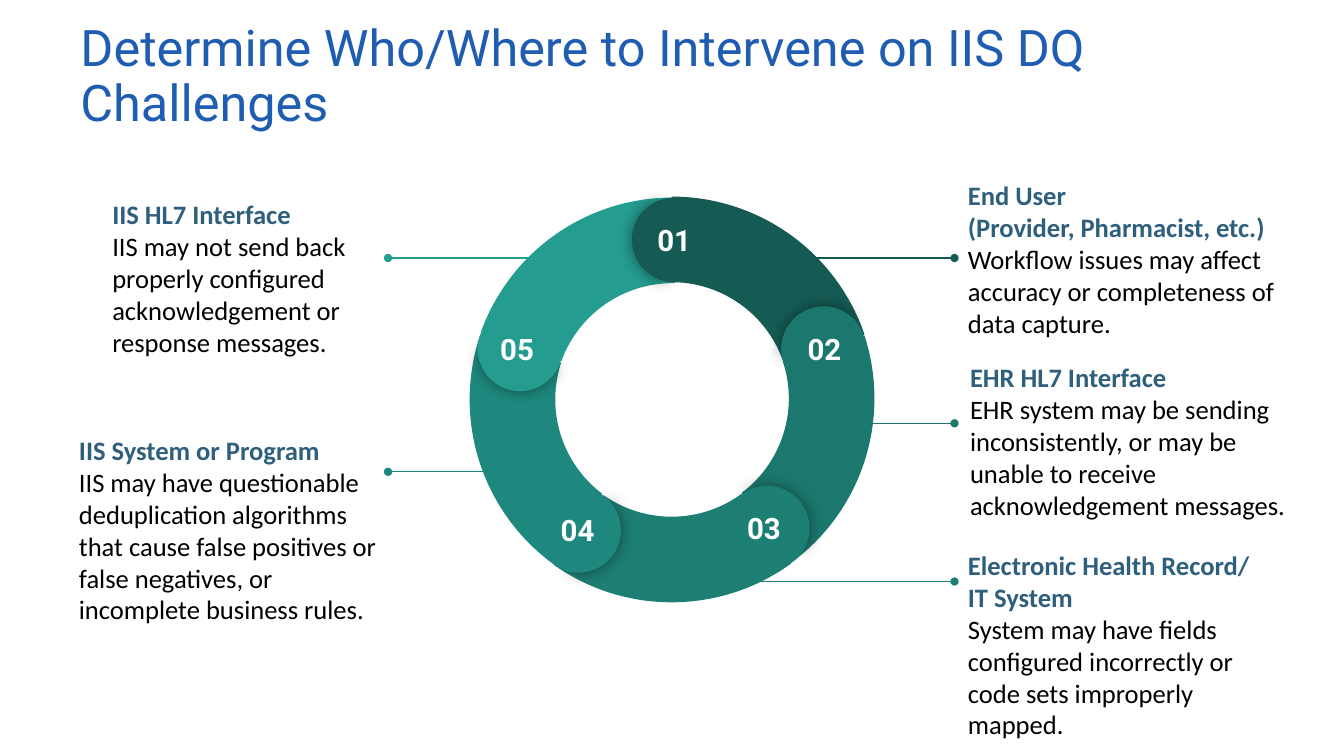
"""Build the slide on where to intervene on IIS data quality challenges."""
from lxml import etree
from pptx import Presentation
from pptx.dml.color import RGBColor
from pptx.enum.shapes import MSO_CONNECTOR, MSO_SHAPE
from pptx.enum.text import MSO_ANCHOR, PP_ALIGN
from pptx.oxml.ns import qn
from pptx.util import Pt

BLOCK_ARC, PIE = MSO_SHAPE.BLOCK_ARC, MSO_SHAPE.PIE
STRAIGHT = MSO_CONNECTOR.STRAIGHT
TOP, MIDDLE = MSO_ANCHOR.TOP, MSO_ANCHOR.MIDDLE
LEFT, CENTER = PP_ALIGN.LEFT, PP_ALIGN.CENTER

TITLE = "Determine Who/Where to Intervene on IIS DQ Challenges"
TITLE_COLOR, HEADING_COLOR, BODY_COLOR = "1E5DB2", "2E5F7D", "000000"

# heading, body, (left, top, width, height)
CALLOUTS = [
    ("End User\v(Provider, Pharmacist, etc.)",
     "Workflow issues may affect accuracy or completeness of data capture.",
     (681.8, 136.1, 265, 97.2)),
    ("EHR HL7 Interface",
     "EHR system may be sending inconsistently, or may be unable to receive acknowledgement messages.",
     (683.3, 266.4, 244.8, 97.2)),
    ("Electronic Health Record/\vIT System",
     "System may have fields configured incorrectly or code sets improperly mapped.",
     (681.8, 411.8, 244.8, 97.2)),
    ("IIS System or Program",
     "IIS may have questionable deduplication algorithms that cause false positives or "
     "false negatives, or incomplete business rules.",
     (46.8, 318.2, 233.3, 120.2)),
    ("IIS HL7 Interface",
     "IIS may not send back properly configured acknowledgement or response messages.",
     (70.6, 149.8, 223.2, 97.2)),
]

# number, color, arc (left, top, turn), cap (left, top, turn), number left, leader (start, end, height)
SEGMENTS = [
    ("04", "1F887E", (335.5, 139.7, 277), (383, 348.5, 211.1), 385.9, (384.5, 277.2, 337)),
    ("02", "1B786E", (333.4, 139, 132), (558, 218.9, 67.1), 562.3, (589, 681.8, 302.4)),
    ("01", "155B54", (334.1, 140.4, 60), (451.4, 141.1, 357.1), 455, (547.2, 681.8, 184.3)),
    ("03", "1D7E74", (334.1, 139, 204), (517.7, 347, 139.1), 519.1, (488.9, 681.8, 415.4)),
    ("05", "249C90", (334.8, 141.1, 350), (341.3, 218.9, 284.1), 342.7, (406.1, 277.2, 184.3)),
]
RING_SIZE, CAP_SIZE = 291.2, 60.5
ARC_ADJUSTMENTS = (126.03, 168.68, 0.21)
CAP_BACK, CAP_FRONT = (61.9, 149.96), (40.28, 171.84)
CAP_FRONT_TURN = 179.3
NUMBER_SIZE, NUMBER_DROP = (53.3, 28.1), 7.9


def rgb(color):
    return RGBColor.from_string(color)


def add_text(slide, box, paragraphs, font_name, size, insets, anchor, align=LEFT):
    """Add a text box; each paragraph is (text, color, bold)."""
    frame = slide.shapes.add_textbox(*map(Pt, box)).text_frame
    frame.word_wrap = True
    frame.vertical_anchor = anchor
    frame.margin_left = frame.margin_right = Pt(insets[0])
    frame.margin_top = frame.margin_bottom = Pt(insets[1])
    for index, (text, color, bold) in enumerate(paragraphs):
        paragraph = frame.add_paragraph() if index else frame.paragraphs[0]
        paragraph.text = text
        paragraph.alignment = align
        paragraph.font.name = font_name
        paragraph.font.size = Pt(size)
        paragraph.font.bold = bold
        paragraph.font.color.rgb = rgb(color)
    return frame


def add_leader(slide, color, start, end, height):
    """Add a thin line ending in a dot."""
    leader = slide.shapes.add_connector(STRAIGHT, Pt(start), Pt(height), Pt(end), Pt(height))
    leader.line.width = Pt(0.75)
    leader.line.color.rgb = rgb(color)
    etree.SubElement(leader.line._get_or_add_ln(), qn("a:tailEnd"), type="oval")
    etree.SubElement(leader._element.spPr, qn("a:effectLst"))


def add_piece(slide, kind, left, top, size, turn, color, adjustments):
    """Add one turned, filled part of the ring."""
    shape = slide.shapes.add_shape(kind, Pt(left), Pt(top), Pt(size), Pt(size))
    shape.rotation = turn % 360
    for index, value in enumerate(adjustments):
        shape.adjustments[index] = value
    shape.fill.solid()
    shape.fill.fore_color.rgb = rgb(color)
    shape.line.fill.background()
    shape.shadow.inherit = False
    return shape


def add_glow(shape):
    """Give a shape a soft shadow on all sides."""
    effects = shape._element.spPr.find(qn("a:effectLst"))
    shadow = etree.SubElement(effects, qn("a:outerShdw"), blurRad=str(Pt(11.2)), dist="0",
                              dir="0", algn="ctr", rotWithShape="0")
    color = etree.SubElement(shadow, qn("a:srgbClr"), val="000000")
    etree.SubElement(color, qn("a:alpha"), val="43000")


def main():
    presentation = Presentation()
    presentation.slide_width, presentation.slide_height = Pt(960), Pt(540)
    slide = presentation.slides.add_slide(presentation.slide_layouts[6])

    title = add_text(slide, (50.4, 16.6, 908.6, 77.8), [(TITLE, TITLE_COLOR, False)],
                     "Roboto", 36, (7.2, 3.6), MIDDLE)
    title.paragraphs[0].line_spacing = 0.9

    for heading, body, box in CALLOUTS:
        frame = add_text(slide, box, [(heading, HEADING_COLOR, True), (body, BODY_COLOR, False)],
                         "Calibri", 19, (9.6, 9.6), MIDDLE)
        frame.paragraphs[1].space_after = Pt(21)

    for _, color, _, _, _, leader in SEGMENTS:
        add_leader(slide, color, *leader)
    for _, color, (left, top, turn), _, _, _ in SEGMENTS:
        add_piece(slide, BLOCK_ARC, left, top, RING_SIZE, turn, color, ARC_ADJUSTMENTS)
    for number, color, _, (left, top, turn), number_left, _ in SEGMENTS:
        add_glow(add_piece(slide, PIE, left, top, CAP_SIZE, turn, color, CAP_BACK))
        add_piece(slide, PIE, left, top, CAP_SIZE, turn + CAP_FRONT_TURN, color, CAP_FRONT)
        add_text(slide, (number_left, top + NUMBER_DROP, *NUMBER_SIZE),
                 [(number, "FFFFFF", True)], "Roboto", 21, (9.6, 9.6), TOP, CENTER)

    presentation.save("out.pptx")


if __name__ == "__main__":
    main()
